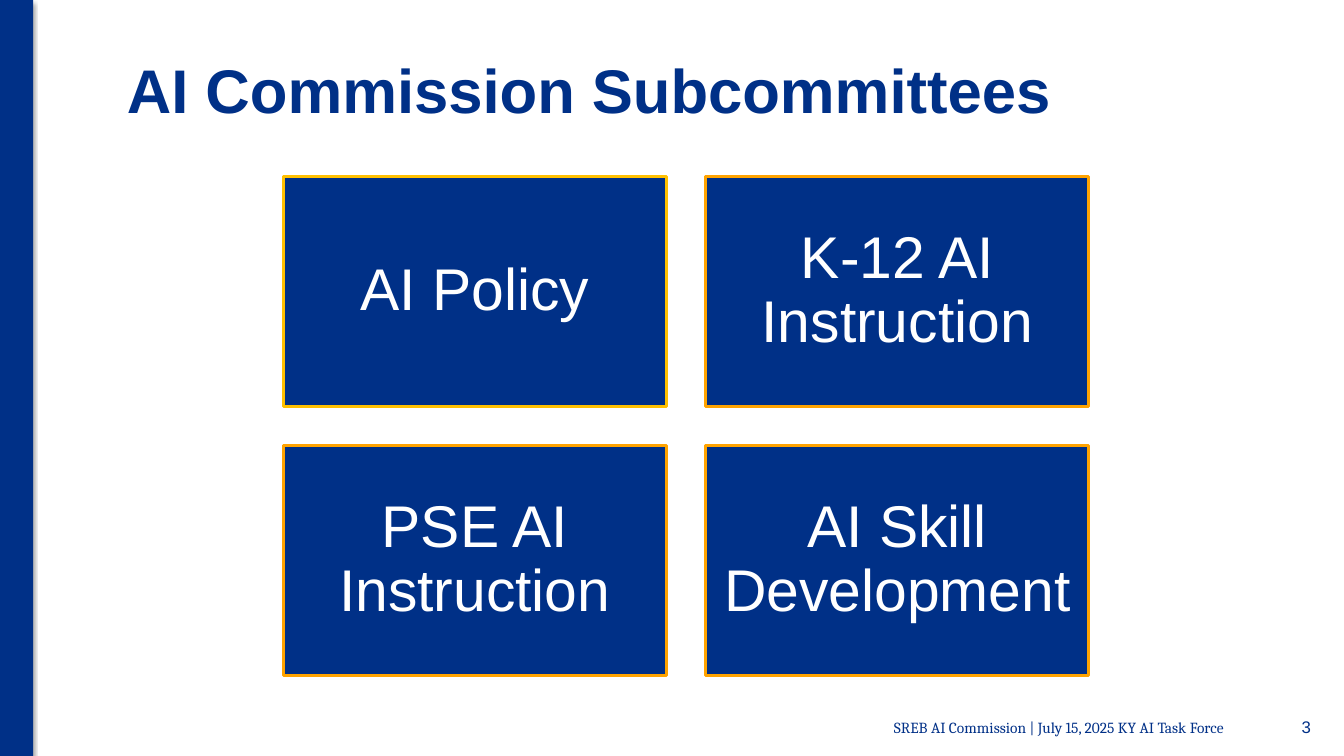
from lxml import etree
from pptx import Presentation
from pptx.dml.color import RGBColor
from pptx.enum import shapes, text
from pptx.oxml import ns
from pptx.util import Inches, Pt

NAVY = RGBColor(0x00, 0x30, 0x87)
GOLD = RGBColor(0xFF, 0xC0, 0x00)
ORANGE = RGBColor(0xFF, 0xA3, 0x00)
WHITE = RGBColor(0xFF, 0xFF, 0xFF)

SUBCOMMITTEES = [
    ("AI Policy", GOLD),
    ("K-12 AI Instruction", ORANGE),
    ("PSE AI Instruction", ORANGE),
    ("AI Skill Development", ORANGE),
]


def add_rectangle(page, left, top, width, height):
    box = page.shapes.add_shape(
        shapes.MSO_SHAPE.RECTANGLE,
        Inches(left), Inches(top), Inches(width), Inches(height))
    box.shadow.inherit = False
    box.fill.solid()
    box.fill.fore_color.rgb = NAVY
    return box


def write(box, words, size, color, align, font="Arial", bold=False):
    frame = box.text_frame
    frame.word_wrap = True
    frame.vertical_anchor = text.MSO_ANCHOR.MIDDLE
    frame.text = words
    para = frame.paragraphs[0]
    para.alignment = align
    para.line_spacing = 0.9
    span = para.runs[0]
    span.font.name = font
    span.font.size = Pt(size)
    span.font.bold = bold
    span.font.color.rgb = color


def add_label(page, left, top, width, height, *args, **style):
    box = page.shapes.add_textbox(
        Inches(left), Inches(top), Inches(width), Inches(height))
    write(box, *args, **style)


def add_side_bar(page, left, top, width, height):
    bar = add_rectangle(page, left, top, width, height)
    bar.line.fill.background()
    # Soft shadow below the bar
    effects = bar._element.spPr.find(ns.qn("a:effectLst"))
    shadow = etree.SubElement(
        effects, ns.qn("a:outerShdw"), blurRad=str(Pt(3.1)), dist=str(Pt(1.8)),
        dir="5400000", rotWithShape="0")
    color = etree.SubElement(shadow, ns.qn("a:srgbClr"), val="000000")
    etree.SubElement(color, ns.qn("a:alpha"), val="35000")


def add_subcommittee_grid(page, left, top, width, height, columns=2, gap=0.39):
    rows = len(SUBCOMMITTEES) // columns
    card_width = (width - gap * (columns - 1)) / columns
    card_height = (height - gap * (rows - 1)) / rows
    for index, (name, outline) in enumerate(SUBCOMMITTEES):
        row, column = divmod(index, columns)
        card = add_rectangle(
            page, left + column * (card_width + gap),
            top + row * (card_height + gap), card_width, card_height)
        card.line.color.rgb = outline
        card.line.width = Pt(2)
        frame = card.text_frame
        frame.margin_left = frame.margin_right = Inches(0.17)
        frame.margin_top = frame.margin_bottom = Inches(0.17)
        write(card, name, 42, WHITE, text.PP_ALIGN.CENTER)


def add_footer(page, left, top, width, height, number_width=0.83):
    right = text.PP_ALIGN.RIGHT
    number_left = left + width - number_width
    add_label(page, left, top, number_left - left - 0.03, height,
              "SREB AI Commission | July 15, 2025 KY AI Task Force",
              11, NAVY, right, font="Cambria")
    add_label(page, number_left, top, number_width, height,
              "3", 12, NAVY, right)


def main():
    deck = Presentation()
    deck.slide_width, deck.slide_height = Inches(13.33), Inches(7.5)
    page = deck.slides.add_slide(deck.slide_layouts[6])

    add_side_bar(page, 0, 0, 0.33, 7.5)
    # Title
    add_label(page, 1.16, 0.3, 11.29, 1.25, "AI Commission Subcommittees",
              44, NAVY, text.PP_ALIGN.LEFT, bold=True)
    add_subcommittee_grid(page, 2.81, 1.75, 7.99, 4.95)
    add_footer(page, 7.65, 7, 5.45, 0.45)

    deck.save("out.pptx")


if __name__ == "__main__":
    main()
